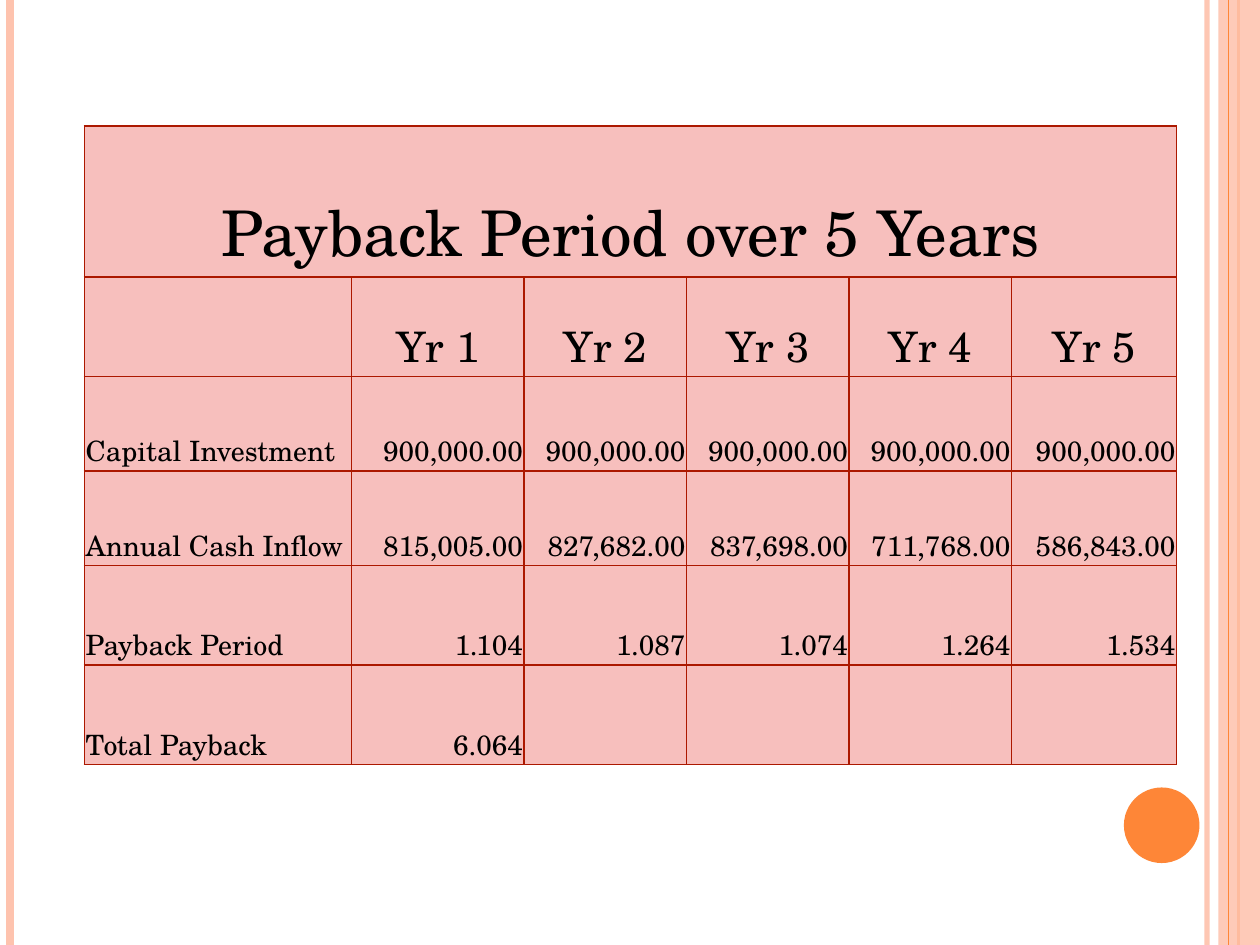
from dataclasses import dataclass

from lxml.etree import SubElement
from pptx import Presentation
from pptx.dml.color import RGBColor as Rgb
from pptx.enum.shapes import MSO_CONNECTOR as Connector, MSO_SHAPE as Preset
from pptx.enum.text import MSO_ANCHOR as Anchor, PP_ALIGN as Align
from pptx.oxml.ns import qn
from pptx.util import Inches, Pt


@dataclass(frozen=True)
class Theme:
    """Colours, font and type sizes of the slide."""
    font: str = "TeX Gyre Schola"
    ink: str = "000000"
    peach: str = "FEC3AE"
    orange: str = "FE8637"
    cell: str = "F7BFBD"
    border: str = "AC1800"
    title: int = 36
    heading: int = 24
    body: int = 16


THEME = Theme()
WIDTH, HEIGHT = 10, 7.5
COLUMNS = [2.12, 1.37, 1.29, 1.29, 1.29, 1.31]
ROWS = [1.2, 0.79, 0.75, 0.75, 0.79, 0.79]
RULES = [(9.58, THEME.peach, 3, 93), (0.08, THEME.peach, 4.5, 100), (9.83, THEME.orange, 1.5, 100)]
INNER_RULE = (9.75, THEME.orange, 0.75, 100)
TITLE = "Payback Period over 5 Years"
YEARS = [f"Yr {year}" for year in range(1, 6)]
FIGURES = [
    ["Capital Investment"] + ["900,000.00"] * 5,
    ["Annual Cash Inflow", "815,005.00", "827,682.00", "837,698.00", "711,768.00", "586,843.00"],
    ["Payback Period", "1.104", "1.087", "1.074", "1.264", "1.534"],
    ["Total Payback", "6.064", "", "", "", ""],
]


def paint(fill, colour, opacity=100):
    """Give a fill a solid colour with an opacity in percent."""
    fill.solid()
    fill.fore_color.rgb = Rgb.from_string(colour)
    if opacity < 100:
        tint = fill._xPr.find(qn("a:solidFill"))[0]
        SubElement(tint, qn("a:alpha"), val=str(opacity * 1000))


def add_rule(slide, x, colour, weight, opacity):
    """Draw a vertical rule over the full slide height."""
    rule = slide.shapes.add_connector(Connector.STRAIGHT, Inches(x), 0, Inches(x), Inches(HEIGHT))
    rule.line.width = Pt(weight)
    paint(rule.line.fill, colour, opacity)
    SubElement(rule._element.spPr, qn("a:effectLst"))


def add_block(slide, preset, box, colour, opacity=100):
    """Add a plain shape without an outline."""
    block = slide.shapes.add_shape(preset, *map(Inches, box))
    block.shadow.inherit = False
    block.line.fill.background()
    paint(block.fill, colour, opacity)


def add_borders(cell):
    """Outline a cell ahead of its fill."""
    properties = cell._tc.get_or_add_tcPr()
    for position, side in enumerate(("a:lnL", "a:lnR", "a:lnT", "a:lnB")):
        edge = SubElement(properties, qn(side), w=str(Pt(1)))
        properties.insert(position, edge)
        SubElement(SubElement(edge, qn("a:solidFill")), qn("a:srgbClr"), val=THEME.border)


def fill_cell(cell, wording, size, align):
    """Format a cell and write its wording."""
    paint(cell.fill, THEME.cell)
    add_borders(cell)
    cell.vertical_anchor = Anchor.BOTTOM
    cell.margin_left = cell.margin_right = cell.margin_top = Inches(0.01)
    cell.margin_bottom = 0
    paragraph = cell.text_frame.paragraphs[0]
    paragraph.alignment = align
    if wording:
        run = paragraph.add_run()
        run.text = wording
        run.font.name, run.font.size = THEME.font, Pt(size)
        run.font.color.rgb = Rgb.from_string(THEME.ink)


def add_payback_table(slide):
    """Add the table of yearly payback figures."""
    box = map(Inches, (0.67, 1, sum(COLUMNS), sum(ROWS)))
    table = slide.shapes.add_table(len(ROWS), len(COLUMNS), *box).table
    table.first_row = table.horz_banding = False
    for column, width in zip(table.columns, COLUMNS):
        column.width = Inches(width)
    for row, height in zip(table.rows, ROWS):
        row.height = Inches(height)
    content = [[TITLE] + [""] * 5, [""] + YEARS] + FIGURES
    sizes = [THEME.title, THEME.heading] + [THEME.body] * len(FIGURES)
    for r, (wordings, size) in enumerate(zip(content, sizes)):
        for c, wording in enumerate(wordings):
            align = Align.CENTER if r < 2 else Align.RIGHT if c else Align.LEFT
            fill_cell(table.cell(r, c), wording, size, align)
    table.cell(0, 0).merge(table.cell(0, len(COLUMNS) - 1))


def main():
    """Build and save the slide."""
    deck = Presentation()
    deck.slide_width, deck.slide_height = Inches(WIDTH), Inches(HEIGHT)
    slide = deck.slides.add_slide(deck.slide_layouts[6])
    for rule in RULES:
        add_rule(slide, *rule)
    add_block(slide, Preset.RECTANGLE, (9.67, 0, 0.33, HEIGHT), THEME.peach, 87)
    add_rule(slide, *INNER_RULE)
    add_block(slide, Preset.OVAL, (8.92, 6.25, 0.6, 0.6), THEME.orange)
    add_payback_table(slide)
    deck.save("out.pptx")


if __name__ == "__main__":
    main()
